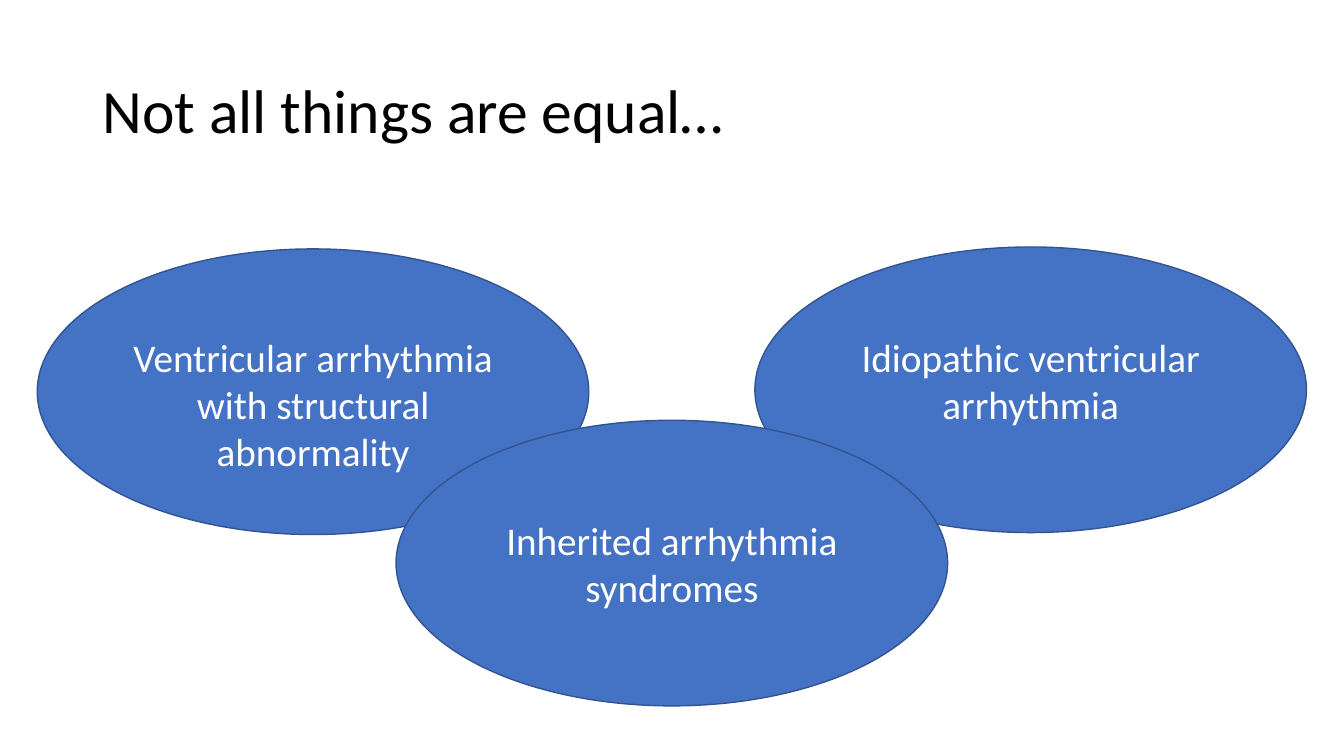
from dataclasses import dataclass

from pptx import Presentation
from pptx.dml.color import RGBColor
from pptx.enum.shapes import MSO_SHAPE as Shape
from pptx.enum.text import MSO_ANCHOR as Anchor, MSO_AUTO_SIZE as AutoSize, PP_ALIGN as Align
from pptx.util import Pt


@dataclass(frozen=True)
class Theme:
    font: str = "Calibri"
    title_size: float = 44
    label_size: float = 28
    background: str = "FFFFFF"
    title: str = "000000"
    label: str = "FFFFFF"
    fill: str = "4472C4"
    outline: str = "325491"


def colour(code):
    return RGBColor.from_string(code)


def write(frame, text, *, font, size, color, align=Align.LEFT, anchor=Anchor.TOP, spacing=1.0):
    frame.word_wrap = True
    frame.vertical_anchor = anchor
    para = frame.paragraphs[0]
    para.alignment = align
    para.line_spacing = spacing
    span = para.add_run()
    span.text = text
    span.font.name = font
    span.font.size = Pt(size)
    span.font.color.rgb = colour(color)


class SlideBuilder:
    def __init__(self, page, theme):
        self.page = page
        self.theme = theme
        page.background.fill.solid()
        page.background.fill.fore_color.rgb = colour(theme.background)

    def title(self, text, left, top, width, height):
        box = self.page.shapes.title
        box.left, box.top, box.width, box.height = map(Pt, (left, top, width, height))
        box.text_frame.auto_size = AutoSize.NONE
        write(box.text_frame, text, font=self.theme.font, size=self.theme.title_size,
              color=self.theme.title, anchor=Anchor.MIDDLE, spacing=0.9)

    def ellipse(self, left, top, width, height):
        oval = self.page.shapes.add_shape(Shape.OVAL, *map(Pt, (left, top, width, height)))
        oval.shadow.inherit = False
        oval.fill.solid()
        oval.fill.fore_color.rgb = colour(self.theme.fill)
        oval.line.color.rgb = colour(self.theme.outline)
        oval.line.width = Pt(1)

    def label(self, text, left, top, width, height):
        box = self.page.shapes.add_textbox(*map(Pt, (left, top, width, height)))
        write(box.text_frame, text, font=self.theme.font, size=self.theme.label_size,
              color=self.theme.label, align=Align.CENTER)
        box.text_frame.auto_size = AutoSize.SHAPE_TO_FIT_TEXT


def main():
    deck = Presentation()
    deck.slide_width, deck.slide_height = Pt(960), Pt(540)
    page = deck.slides.add_slide(deck.slide_layouts.get_by_name("Title Only"))
    slide = SlideBuilder(page, Theme())

    # Title
    slide.title("Not all things are equal…", 66, 28.75, 828, 104.4)

    # Overlapping groups: text, left, ellipse top, label top, label height
    oval_width, oval_height = 394, 204
    label_width = 286
    inset = (oval_width - label_width) / 2
    groups = [
        ("Ventricular arrhythmia with structural abnormality", 26.6, 177.8, 234.7, 131),
        ("Idiopathic ventricular arrhythmia", 539.2, 176.4, 234.7, 97.2),
        ("Inherited arrhythmia syndromes", 282.9, 300.2, 365, 97.2),
    ]
    for text, left, oval_top, label_top, label_height in groups:
        slide.ellipse(left, oval_top, oval_width, oval_height)
        slide.label(text, left + inset, label_top, label_width, label_height)

    deck.save("out.pptx")


if __name__ == "__main__":
    main()
